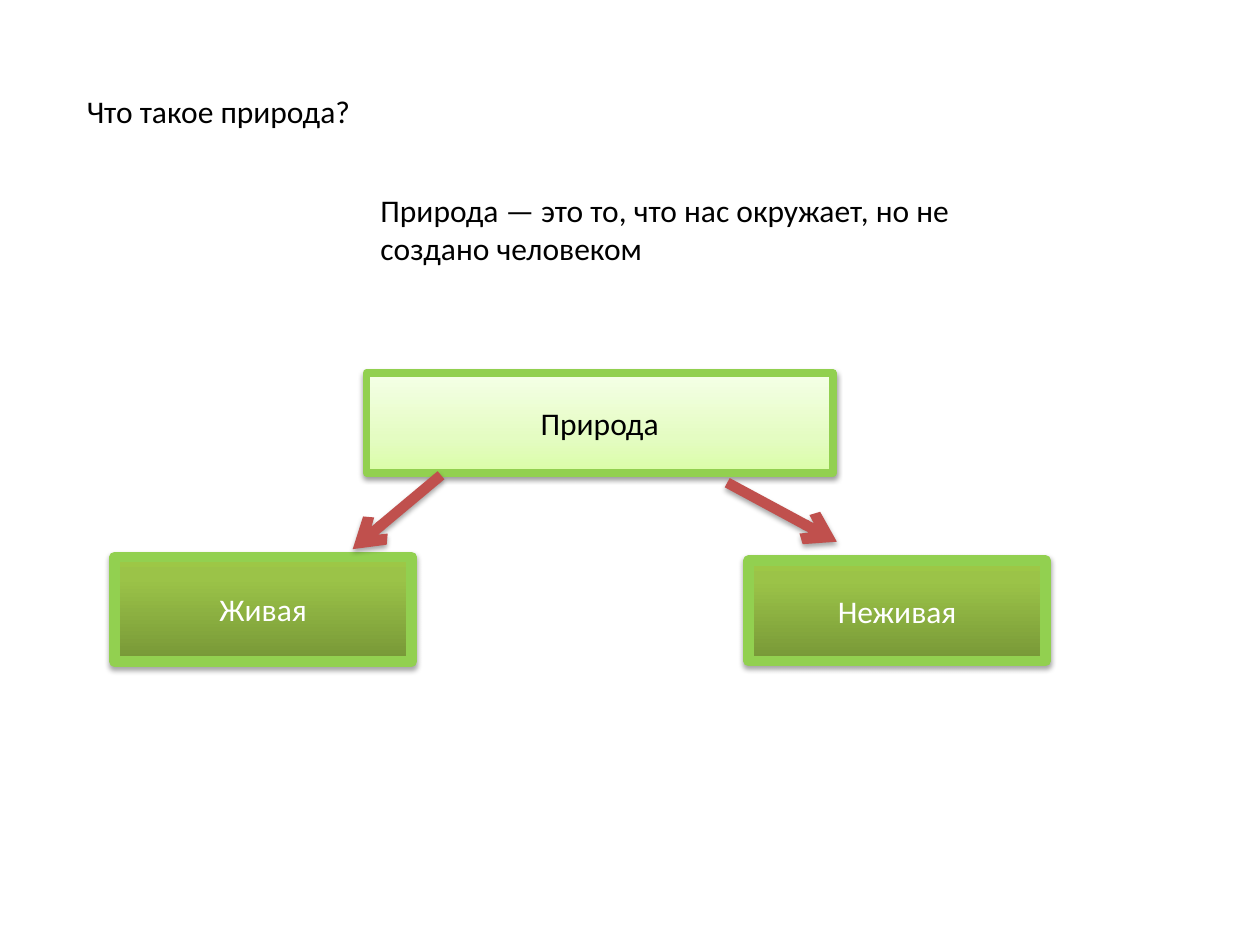
from dataclasses import dataclass

from lxml.etree import SubElement
from pptx import Presentation
from pptx.dml.color import RGBColor
from pptx.enum.shapes import MSO_CONNECTOR as Connector, MSO_SHAPE as Shape
from pptx.enum.text import MSO_ANCHOR as Anchor, MSO_AUTO_SIZE as AutoSize, PP_ALIGN as Align
from pptx.oxml.ns import qn
from pptx.util import Cm, Pt

FONT = "Calibri"
GREEN = "92D050"
RED = "C0504D"
PALE_STOPS = ((0, "DAFDA7"), (35, "E4FCC2"), (100, "F5FFE7"))
DEEP_STOPS = ((0, "779737"), (80, "9BC348"), (100, "9DC746"))


@dataclass(frozen=True)
class Note:
    text: str
    left: float
    top: float
    width: float
    height: float
    wrap: bool


@dataclass(frozen=True)
class Box:
    text: str
    left: float
    top: float
    width: float
    height: float
    stops: tuple
    color: str = "FFFFFF"
    border: float = 6
    shadow_alpha: int = 35
    shadow_distance: float = 1.8


@dataclass(frozen=True)
class Arrow:
    start: tuple[float, float]
    end: tuple[float, float]


NOTES = (
    Note("Что такое природа?", 1.5, 1.73, 6.05, 1.02, False),
    Note("Природа — это то, что нас окружает, но не создано человеком",
         7.42, 3.73, 12.7, 1.8, True),
)
BOXES = (
    Box("Природа", 7.39, 7.52, 9.4, 2.01, PALE_STOPS, "000000", 4.5, 38, 1.6),
    Box("Живая", 2.31, 11.23, 5.99, 2.11, DEEP_STOPS),
    Box("Неживая", 15.09, 11.3, 5.99, 2.03, DEEP_STOPS),
)
ARROWS = (
    Arrow((8.89, 9.58), (7.11, 11.07)),
    Arrow((14.66, 9.73), (16.87, 10.92)),
)


def rgb(color: str) -> RGBColor:
    return RGBColor.from_string(color)


def write_text(frame, text: str, *, color: str = "000000", size: float = 18,
               align=Align.LEFT, anchor=Anchor.TOP, wrap: bool = True) -> None:
    frame.word_wrap = wrap
    frame.vertical_anchor = anchor
    paragraph = frame.paragraphs[0]
    paragraph.alignment = align
    run = paragraph.add_run()
    run.text = text
    run.font.name = FONT
    run.font.size = Pt(size)
    run.font.color.rgb = rgb(color)


def set_line(line, color: str, width: float) -> None:
    line.color.rgb = rgb(color)
    line.width = Pt(width)


def add_shadow(properties, alpha: int = 35, distance: float = 1.8) -> None:
    effects = SubElement(properties, qn("a:effectLst"))
    shadow = SubElement(effects, qn("a:outerShdw"), blurRad=str(Pt(3.1)),
                        dist=str(Pt(distance)), dir="5400000", rotWithShape="0")
    color = SubElement(shadow, qn("a:srgbClr"), val="000000")
    SubElement(color, qn("a:alpha"), val=str(alpha * 1000))


def set_gradient(shape, stops: tuple) -> None:
    shape.fill.gradient()
    shape.fill.gradient_angle = 90
    stop_list = shape._element.spPr.find(qn("a:gradFill")).find(qn("a:gsLst"))
    for old_stop in list(stop_list):
        stop_list.remove(old_stop)
    for position, color in stops:
        stop = SubElement(stop_list, qn("a:gs"), pos=str(position * 1000))
        SubElement(stop, qn("a:srgbClr"), val=color)


def draw_note(slide, note: Note) -> None:
    shape = slide.shapes.add_textbox(Cm(note.left), Cm(note.top), Cm(note.width), Cm(note.height))
    write_text(shape.text_frame, note.text, wrap=note.wrap)
    shape.text_frame.auto_size = AutoSize.SHAPE_TO_FIT_TEXT


def draw_box(slide, box: Box) -> None:
    shape = slide.shapes.add_shape(Shape.RECTANGLE, Cm(box.left), Cm(box.top),
                                   Cm(box.width), Cm(box.height))
    set_gradient(shape, box.stops)
    set_line(shape.line, GREEN, box.border)
    add_shadow(shape._element.spPr, box.shadow_alpha, box.shadow_distance)
    write_text(shape.text_frame, box.text, color=box.color,
               align=Align.CENTER, anchor=Anchor.MIDDLE)


def draw_arrow(slide, arrow: Arrow) -> None:
    ends = [Cm(value) for value in arrow.start + arrow.end]
    connector = slide.shapes.add_connector(Connector.STRAIGHT, *ends)
    set_line(connector.line, RED, 6)
    properties = connector._element.spPr
    SubElement(properties.find(qn("a:ln")), qn("a:tailEnd"), type="arrow")
    add_shadow(properties)


def main() -> None:
    presentation = Presentation()
    presentation.slide_width = Cm(25.4)
    presentation.slide_height = Cm(19.05)
    slide = presentation.slides.add_slide(presentation.slide_layouts[6])
    for note in NOTES:
        draw_note(slide, note)
    for box in BOXES:
        draw_box(slide, box)
    for arrow in ARROWS:
        draw_arrow(slide, arrow)
    presentation.save("out.pptx")


if __name__ == "__main__":
    main()
